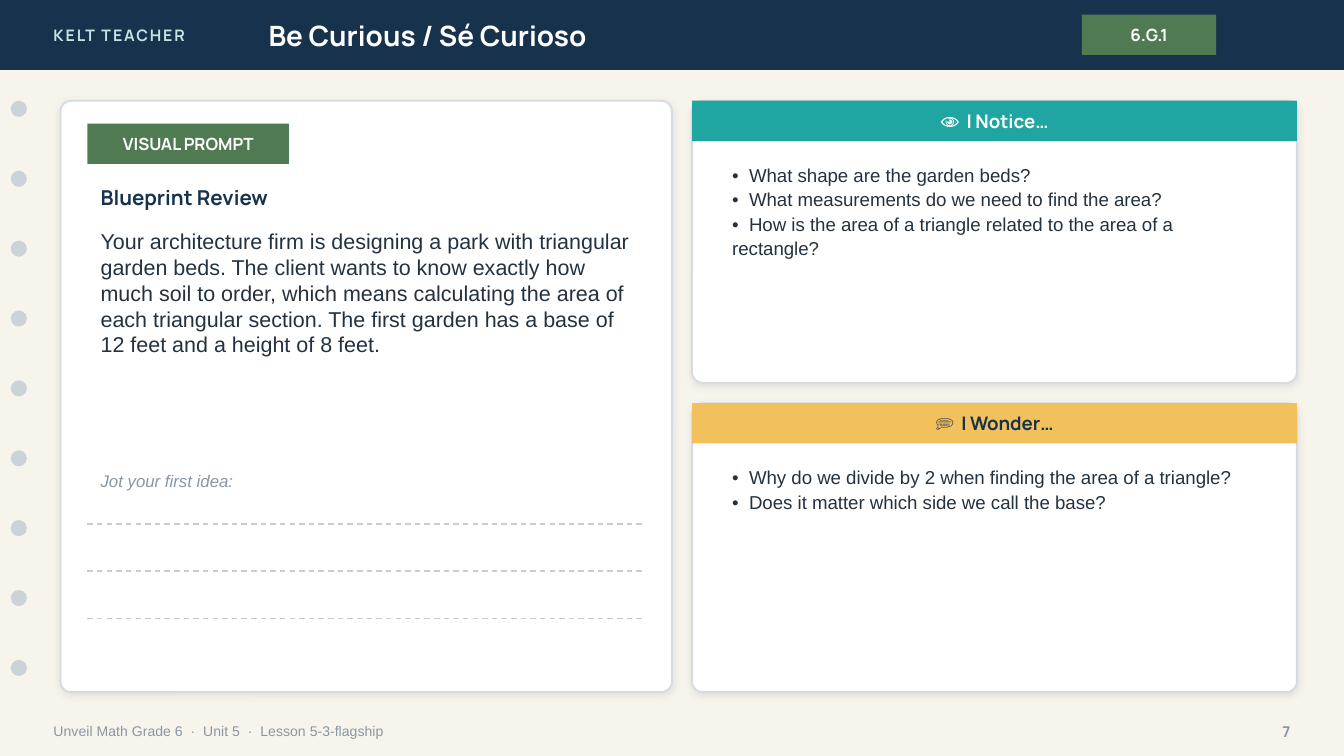
from lxml.etree import SubElement
from pptx import Presentation
from pptx.dml.color import RGBColor
from pptx.enum.dml import MSO_LINE
from pptx.enum.shapes import MSO_CONNECTOR, MSO_SHAPE
from pptx.enum.text import MSO_ANCHOR, PP_ALIGN
from pptx.oxml.ns import qn
from pptx.util import Pt

# Content
HEAD, TITLE, CODE = "KELT TEACHER", "Be Curious / Sé Curioso", "6.G.1"
TAG, TOPIC, JOT = "VISUAL PROMPT", "Blueprint Review", "Jot your first idea:"
STORY = (
    "Your architecture firm is designing a park with triangular garden beds. "
    "The client wants to know exactly how much soil to order, which means "
    "calculating the area of each triangular section. The first garden has "
    "a base of 12 feet and a height of 8 feet."
)
FOOT, PAGE = "Unveil Math Grade 6  ·  Unit 5  ·  Lesson 5-3-flagship", "7"
CARDS = [
    dict(head="👁  I Notice…", fill="teal", ink="white", top=75, high=210, adj=0.038,
         items=["What shape are the garden beds?",
                "What measurements do we need to find the area?",
                "How is the area of a triangle related to the area of a rectangle?"]),
    dict(head="💭  I Wonder…", fill="gold", ink="navy", top=300, high=215, adj=0.037,
         items=["Why do we divide by 2 when finding the area of a triangle?",
                "Does it matter which side we call the base?"]),
]
COLORS = dict(
    paper="F7F4EC", navy="17324D", mint="BFE6E2", white="FFFFFF", green="4F7A52",
    hole="CBD3D9", gray="8A96A3", edge="D6DBDF", shade="1C2E42", ink="24323F",
    rule="C7CDD2", teal="1FA6A2", gold="F2C15B",
)
PX = 9144  # 100 px to the inch
WIDE = 1000

deck = Presentation()
deck.slide_width = WIDE * PX
deck.slide_height = WIDE * PX * 9 // 16
slide = deck.slides.add_slide(deck.slide_layouts[6])


def color(name):
    return RGBColor.from_string(COLORS[name])


def emu(*box):
    return [n * PX for n in box]


def write(shape, text, size=10, font="Manrope", ink="ink", bold=False, italic=False,
          align=PP_ALIGN.LEFT, anchor=MSO_ANCHOR.MIDDLE, lines=None, track=None):
    """Fill a shape with one paragraph for each line of text."""
    frame = shape.text_frame
    frame.word_wrap = True
    frame.vertical_anchor = anchor
    frame.text = text
    for para in frame.paragraphs:
        para.alignment = align
        if lines:
            para.line_spacing = lines
        for run in para.runs:
            face = run.font
            face.name, face.size = font, Pt(size)
            face.bold, face.italic = bold, italic
            face.color.rgb = color(ink)
            if track:
                run._r.get_or_add_rPr().set("spc", str(track))


def label(box, text, **look):
    write(slide.shapes.add_textbox(*emu(*box)), text, **look)


def block(box, fill, kind=MSO_SHAPE.RECTANGLE):
    shape = slide.shapes.add_shape(kind, *emu(*box))
    shape.shadow.inherit = False
    shape.fill.solid()
    shape.fill.fore_color.rgb = color(fill)
    shape.line.fill.background()
    return shape


def badge(box, fill, text, ink="white", size=9):
    write(block(box, fill), text, size=size, ink=ink, bold=True, align=PP_ALIGN.CENTER)


def panel(box, adj):
    """White rounded card with a thin edge and a soft shadow."""
    card = block(box, "white", MSO_SHAPE.ROUNDED_RECTANGLE)
    card.adjustments[0] = adj
    card.line.color.rgb = color("edge")
    card.line.width = Pt(1)
    effects = card._element.spPr.find(qn("a:effectLst"))
    shade = SubElement(effects, qn("a:outerShdw"), blurRad=str(Pt(4)), dist=str(Pt(1)),
                       dir="5400000", algn="bl", rotWithShape="0")
    tint = SubElement(shade, qn("a:srgbClr"), val=COLORS["shade"])
    SubElement(tint, qn("a:alpha"), val="10000")


def rule(left, right, y):
    line = slide.shapes.add_connector(MSO_CONNECTOR.STRAIGHT, *emu(left, y, right, y))
    line.line.color.rgb = color("rule")
    line.line.width = Pt(0.75)
    line.line.dash_style = MSO_LINE.DASH
    SubElement(line._element.spPr, qn("a:effectLst"))


# Background and top bar
slide.background.fill.solid()
slide.background.fill.fore_color.rgb = color("paper")
block((0, 0, WIDE, 52), "navy")
label((30, 0, 240, 52), HEAD, size=8.5, ink="mint", bold=True, track=100)
label((190, 0, 560, 52), TITLE, size=15, ink="white", bold=True)
badge((805, 11, 100, 30), "green", CODE)

# Binder holes
for i in range(9):
    block((8, 75 + 52 * i, 12, 12), "hole", MSO_SHAPE.OVAL)

# Footer
label((30, 530, 700, 28), FOOT, size=7.5, font="Arial", ink="gray")
label((920, 530, 50, 28), PAGE, size=8, ink="gray", bold=True, align=PP_ALIGN.RIGHT)

# Prompt card
panel((45, 75, 455, 440), 0.018)
badge((65, 92, 150, 30), "green", TAG)
label((65, 132, 415, 30), TOPIC, size=11, ink="navy", bold=True)
label((65, 165, 415, 170), STORY, size=11.5, font="Arial", anchor=MSO_ANCHOR.TOP)
label((65, 345, 400, 25), JOT, size=9, font="Arial", ink="gray", italic=True)
for i in range(3):
    rule(65, 480, 390 + 35 * i)

# Notice and wonder cards
for card in CARDS:
    top, high = card["top"], card["high"]
    panel((515, top, 450, high), card["adj"])
    badge((515, top, 450, 30), card["fill"], card["head"], ink=card["ink"], size=10)
    label((535, top + 40, 410, high - 50), "\n".join("•  " + item for item in card["items"]),
          font="Arial", anchor=MSO_ANCHOR.TOP, lines=1.1)

deck.save("out.pptx")
